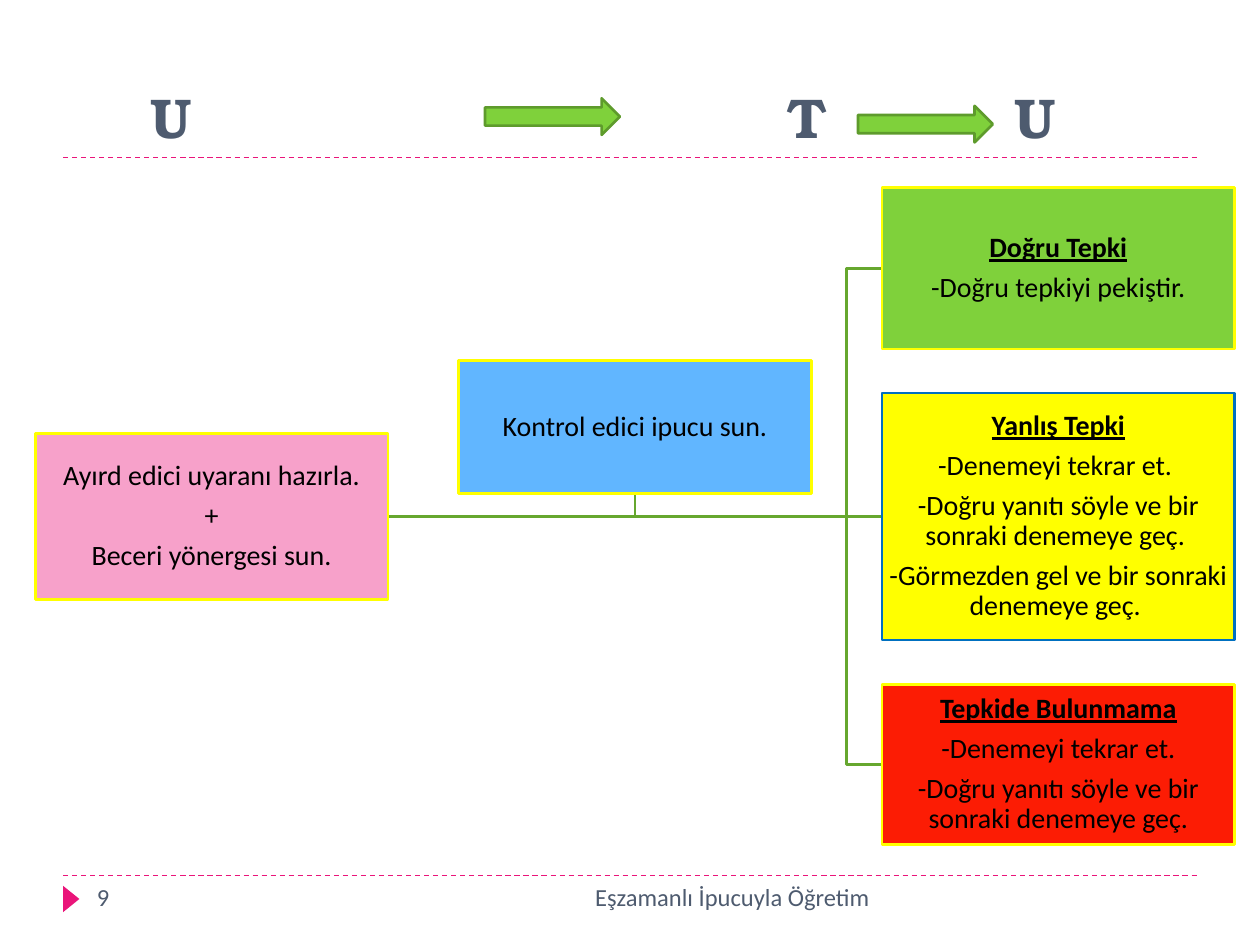
"""Builds a slide with the flow of simultaneous prompting, from stimulus to response to consequence."""
from lxml import etree
from pptx import Presentation
from pptx.dml.color import RGBColor
from pptx.enum.dml import MSO_LINE
from pptx.enum.shapes import MSO_CONNECTOR, MSO_SHAPE
from pptx.enum.text import MSO_ANCHOR, PP_ALIGN
from pptx.oxml.ns import qn
from pptx.util import Inches, Pt

STRAIGHT = MSO_CONNECTOR.STRAIGHT
RECTANGLE, ARROW, TRIANGLE = MSO_SHAPE.RECTANGLE, MSO_SHAPE.RIGHT_ARROW, MSO_SHAPE.ISOSCELES_TRIANGLE
LEFT, CENTER, RIGHT = PP_ALIGN.LEFT, PP_ALIGN.CENTER, PP_ALIGN.RIGHT
TOP, MIDDLE, BOTTOM = MSO_ANCHOR.TOP, MSO_ANCHOR.MIDDLE, MSO_ANCHOR.BOTTOM
DASH = MSO_LINE.DASH

COLORS = {
    "accent": "EA157A", "slate": "4E5B6F", "branch": "66A72F", "arrow_edge": "5E9B2C",
    "pink": "F7A1CA", "blue": "61B6FF", "green": "7FD13B", "yellow": "FFFF00",
    "red": "FC1C04", "navy": "0070C0", "black": "000000",
}
COLUMNS = [0.28 + 3.36 * index for index in range(3)]
BOX_WIDTH = 2.8
CENTER_ROW, ROW_STEP = 4.1, 1.97
TRUNK = 6.72


def paint(shape, fill, line):
    shape.shadow.inherit = False
    if fill:
        shape.fill.solid()
        shape.fill.fore_color.rgb = RGBColor.from_string(COLORS[fill])
    else:
        shape.fill.background()
    if line:
        shape.line.color.rgb = RGBColor.from_string(COLORS[line])
        shape.line.width = Pt(1.5)
    else:
        shape.line.fill.background()


def write(shape, lines, anchor, align, font, paragraph_format):
    frame = shape.text_frame
    frame.word_wrap = True
    frame.vertical_anchor = anchor
    for index, (text, extra) in enumerate(lines):
        paragraph = frame.paragraphs[0] if index == 0 else frame.add_paragraph()
        paragraph.alignment = align
        for name, value in paragraph_format.items():
            setattr(paragraph, name, value)
        run = paragraph.add_run()
        run.text = text
        for name, value in {**font, **extra}.items():
            if name == "color":
                run.font.color.rgb = RGBColor.from_string(COLORS[value])
            else:
                setattr(run.font, name, value)


presentation = Presentation()
presentation.slide_width, presentation.slide_height = Inches(10), Inches(7.5)
slide = presentation.slides.add_slide(presentation.slide_layouts[6])
shapes = slide.shapes

rules = [(0.5, 9.5, 6.95, "accent", 0.75, DASH), (0.5, 9.5, 1.25, "accent", 0.75, DASH),
         (COLUMNS[0] + BOX_WIDTH, COLUMNS[2], CENTER_ROW, "branch", 1.5, None)]
connectors = []
for start, end, row, color, weight, dash in rules:
    connector = shapes.add_connector(STRAIGHT, Inches(start), Inches(row), Inches(end), Inches(row))
    connector.line.color.rgb = RGBColor.from_string(COLORS[color])
    connector.line.width = Pt(weight)
    connector.line.dash_style = dash
    etree.SubElement(connector._element.spPr, qn("a:effectLst"))
    connectors.append(connector)

marker = shapes.add_shape(TRIANGLE, Inches(0.46), Inches(7.07), Inches(0.21), Inches(0.13))
marker.rotation = 90
paint(marker, "accent", None)

heading = {"size": Pt(32), "name": "TeX Gyre Bonum", "bold": True, "color": "slate"}
small = {"size": Pt(14), "name": "Calibri", "color": "slate"}
labels = [
    (0.5, 0.17, 9, 1.07, "\tU\tT\tU", BOTTOM, LEFT, heading),
    (3.17, 6.95, 3.83, 0.4, "Eşzamanlı İpucuyla Öğretim", TOP, RIGHT, small),
    (0.67, 6.95, 2.17, 0.4, "9", TOP, LEFT, small),
]
label_boxes = []
for left, top, width, height, text, anchor, align, font in labels:
    label = shapes.add_textbox(Inches(left), Inches(top), Inches(width), Inches(height))
    write(label, [(text, {})], anchor, align, font, {})
    label_boxes.append(label)

title_properties = label_boxes[0].text_frame.paragraphs[0]._p.get_or_add_pPr()
tab_list = etree.SubElement(title_properties, qn("a:tabLst"))
for position in (0.6, 5.65, 7.45):
    etree.SubElement(tab_list, qn("a:tab"), pos=str(Inches(position)), algn="l")

pink_edge = COLUMNS[0] + BOX_WIDTH
prompt_middle = COLUMNS[1] + BOX_WIDTH / 2
routes = [[(pink_edge, CENTER_ROW), (prompt_middle, CENTER_ROW), (prompt_middle, 3.92)]]
for row in (CENTER_ROW + ROW_STEP, CENTER_ROW - ROW_STEP):
    routes.append([(pink_edge, CENTER_ROW), (TRUNK, CENTER_ROW), (TRUNK, row), (COLUMNS[2], row)])
for route in routes:
    points = [(Inches(x), Inches(y)) for x, y in route]
    builder = shapes.build_freeform(*points[0])
    builder.add_line_segments(points[1:], close=False)
    paint(builder.convert_to_shape(), None, "branch")

title_style = {"bold": True, "underline": True}
boxes = [
    (0, CENTER_ROW, 1.32, "pink", "yellow", [
        ("Ayırd edici uyaranı hazırla.", {}), ("+", {}), ("Beceri yönergesi sun.", {})]),
    (2, CENTER_ROW - ROW_STEP, 1.28, "green", "yellow", [
        ("Doğru Tepki", title_style), ("-Doğru tepkiyi pekiştir.", {})]),
    (2, CENTER_ROW, 1.96, "yellow", "navy", [
        ("Yanlış Tepki", title_style), ("-Denemeyi tekrar et. ", {}),
        ("-Doğru yanıtı söyle ve bir sonraki denemeye geç. ", {}),
        ("-Görmezden gel ve bir sonraki denemeye geç. ", {})]),
    (2, CENTER_ROW + ROW_STEP, 1.27, "red", "yellow", [
        ("Tepkide Bulunmama", title_style), ("-Denemeyi tekrar et.", {}),
        ("-Doğru yanıtı söyle ve bir sonraki denemeye geç.", {})]),
    (1, 3.39, 1.06, "blue", "yellow", [("Kontrol edici ipucu sun.", {})]),
]
body = {"size": Pt(16), "name": "Calibri", "color": "black"}
spacing = {"line_spacing": 0.9, "space_after": Pt(5.6)}
box_shapes = []
for column, middle, height, fill, line, lines in boxes:
    box = shapes.add_shape(RECTANGLE, Inches(COLUMNS[column]), Inches(middle - height / 2),
                           Inches(BOX_WIDTH), Inches(height))
    paint(box, fill, line)
    for side in ("left", "top", "right", "bottom"):
        setattr(box.text_frame, f"margin_{side}", Inches(0.01))
    write(box, lines, MIDDLE, CENTER, body, spacing)
    box_shapes.append(box)
connectors[2].begin_connect(box_shapes[0], 3)
connectors[2].end_connect(box_shapes[2], 1)

for left, top in ((3.85, 0.78), (6.81, 0.84)):
    arrow = shapes.add_shape(ARROW, Inches(left), Inches(top), Inches(1.07), Inches(0.29))
    paint(arrow, "green", "arrow_edge")

presentation.save("out.pptx")
